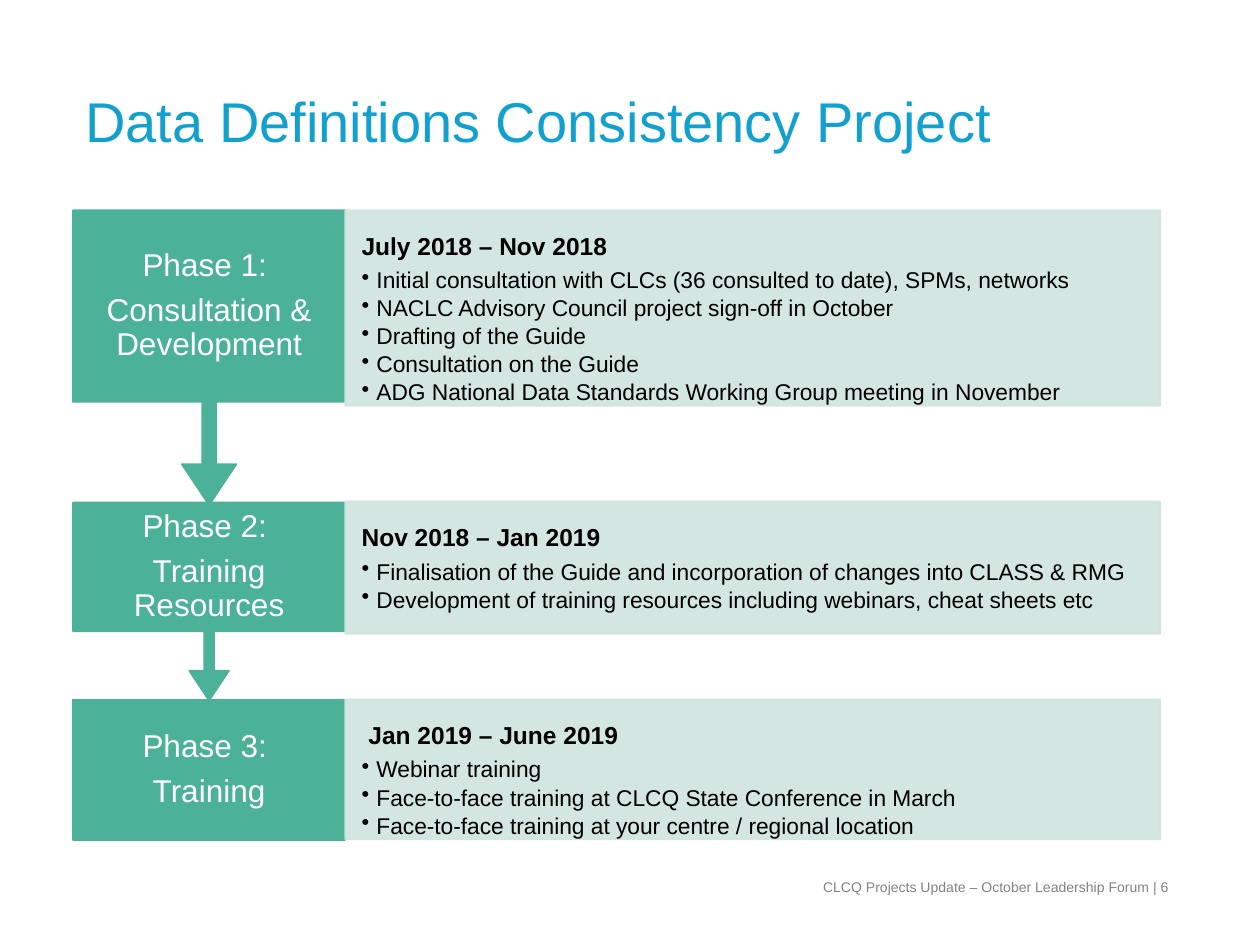
from dataclasses import dataclass

from lxml.etree import SubElement
from pptx import Presentation
from pptx.dml.color import RGBColor
from pptx.enum.shapes import MSO_SHAPE
from pptx.enum.text import MSO_ANCHOR, PP_ALIGN
from pptx.oxml.ns import qn
from pptx.util import Cm, Pt


@dataclass(frozen=True)
class Theme:
    """Colours, font and type sizes of the slide."""
    font: str = "Arial"
    title: str = "12A1CE"
    phase: str = "4CB199"
    panel: str = "D0E4DE"
    light: str = "FFFFFF"
    dark: str = "000000"
    muted: str = "818382"
    title_size: float = 32
    phase_size: float = 18
    date_size: float = 14
    bullet_size: float = 13
    footer_size: float = 8


@dataclass(frozen=True)
class Box:
    """A rectangle in centimetres."""
    left: float
    top: float
    width: float
    height: float

    def lengths(self):
        """Return the four sides as lengths."""
        return [Cm(side) for side in (self.left, self.top, self.width, self.height)]


THEME = Theme()
PHASE_WIDTH = 5.49
CALLOUT_BODY = 0.65
PHASES = [
    (Box(1.47, 4.24, 21.92, 5.94), 4.24, 3.94, ["Phase 1: ", "Consultation & Development"],
     "July 2018 – Nov 2018",
     ["Initial consultation with CLCs (36 consulted to date), SPMs, networks",
      "NACLC Advisory Council project sign-off in October",
      "Drafting of the Guide",
      "Consultation on the Guide",
      "ADG National Data Standards Working Group meeting in November"]),
    (Box(1.47, 10.13, 21.92, 3.99), 10.11, 2.67, ["Phase 2: ", "Training Resources"],
     "Nov 2018 – Jan 2019",
     ["Finalisation of the Guide and incorporation of changes into CLASS & RMG",
      "Development of training resources including webinars, cheat sheets etc"]),
    (Box(1.47, 14.1, 21.92, 2.84), 14.1, 2.82, ["Phase 3: ", "Training"],
     " Jan 2019 – June 2019",
     ["Webinar training",
      "Face-to-face training at CLCQ State Conference in March",
      "Face-to-face training at your centre / regional location"]),
]


def add_para(frame, text, *, size, color, bold=False, align=PP_ALIGN.LEFT,
             spacing=1.0, after=0.0, bullet=False):
    """Append a formatted paragraph, filling the first one when it is empty."""
    para = frame.paragraphs[0]
    if para.runs:
        para = frame.add_paragraph()
    para.alignment, para.line_spacing, para.space_after = align, spacing, Pt(after)
    if bullet:
        properties = para._p.get_or_add_pPr()
        properties.set("marL", str(Cm(0.3)))
        properties.set("indent", str(-Cm(0.3)))
        SubElement(properties, qn("a:buChar")).set("char", "•")
    span = para.add_run()
    span.text = text
    span.font.name, span.font.size, span.font.bold = THEME.font, Pt(size), bold
    span.font.color.rgb = RGBColor.from_string(color)


def set_frame(frame, anchor, side=0.25, edge=0.13):
    """Wrap a text frame and set its anchor and margins."""
    frame.word_wrap, frame.vertical_anchor = True, anchor
    frame.margin_left = frame.margin_right = Cm(side)
    frame.margin_top = frame.margin_bottom = Cm(edge)
    return frame


def add_block(page, kind, box, color, opacity=100):
    """Add a shape whose fill and outline share one colour."""
    block = page.shapes.add_shape(kind, *box.lengths())
    block.shadow.inherit = False
    block.fill.solid()
    block.line.width = Pt(1)
    for paint in (block.fill.fore_color, block.line.color):
        paint.rgb = RGBColor.from_string(color)
    if opacity < 100:
        for tint in block._element.spPr.iter(qn("a:srgbClr")):
            SubElement(tint, qn("a:alpha")).set("val", str(opacity * 1000))
    return block


def add_caption(page, box, text, anchor=MSO_ANCHOR.TOP, **style):
    """Place a single line of text in a box."""
    frame = set_frame(page.shapes.add_textbox(*box.lengths()).text_frame, anchor)
    add_para(frame, text, **style)


def add_phase(page, box, lines, has_arrow):
    """Draw a phase label, with an arrow to the next phase when asked."""
    kind = MSO_SHAPE.UP_ARROW_CALLOUT if has_arrow else MSO_SHAPE.RECTANGLE
    block = add_block(page, kind, box, THEME.phase)
    body = box.height
    if has_arrow:
        block.rotation = 180
        for index, value in enumerate((0.05, 0.1, 0.15, CALLOUT_BODY)):
            block.adjustments[index] = value
        body *= CALLOUT_BODY
    label = page.shapes.add_textbox(*Box(box.left, box.top, box.width, body).lengths())
    frame = set_frame(label.text_frame, MSO_ANCHOR.MIDDLE, 0.38, 0.36)
    for line in lines:
        add_para(frame, line, size=THEME.phase_size, color=THEME.light,
                 align=PP_ALIGN.CENTER, spacing=0.9, after=6.3)


def add_panel(page, box, dates, tasks):
    """Draw the pale panel with its dates and bulleted tasks."""
    panel = add_block(page, MSO_SHAPE.RECTANGLE, box, THEME.panel, opacity=90)
    frame = set_frame(panel.text_frame, MSO_ANCHOR.TOP, 0.33, 0.48)
    add_para(frame, dates, size=THEME.date_size, color=THEME.dark, bold=True,
             spacing=0.9, after=4.9)
    for task in tasks:
        add_para(frame, task, size=THEME.bullet_size, color=THEME.dark,
                 spacing=0.9, after=1.95, bullet=True)


def main():
    """Build the slide and save it."""
    deck = Presentation()
    deck.slide_width, deck.slide_height = Cm(25.4), Cm(19.05)
    page = deck.slides.add_slide(deck.slide_layouts[6])
    add_caption(page, Box(1.47, 0.84, 21.59, 3.18), "Data Definitions Consistency Project",
                anchor=MSO_ANCHOR.MIDDLE, size=THEME.title_size, color=THEME.title)
    add_caption(page, Box(13.46, 17.58, 10.36, 0.64),
                "CLCQ Projects Update – October Leadership Forum | 6",
                size=THEME.footer_size, color=THEME.muted, align=PP_ALIGN.RIGHT)
    for row, panel_top, panel_height, lines, dates, tasks in reversed(PHASES):
        add_phase(page, Box(row.left, row.top, PHASE_WIDTH, row.height), lines,
                  has_arrow=row is not PHASES[-1][0])
        add_panel(page, Box(row.left + PHASE_WIDTH, panel_top,
                            row.width - PHASE_WIDTH, panel_height), dates, tasks)
    deck.save("out.pptx")


if __name__ == "__main__":
    main()
